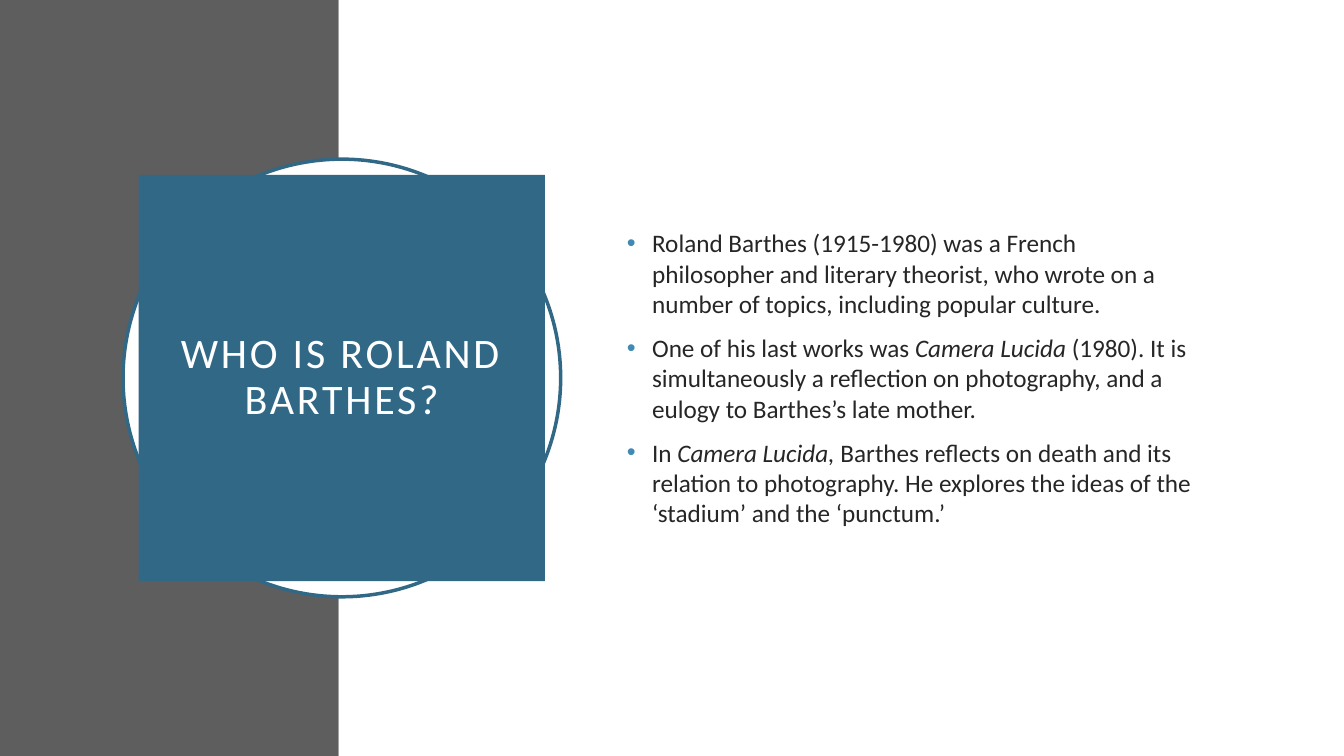
from lxml.etree import SubElement
from pptx import Presentation
from pptx.dml.color import RGBColor
from pptx.enum.shapes import MSO_SHAPE
from pptx.enum.text import MSO_ANCHOR, PP_ALIGN
from pptx.oxml.ns import qn
from pptx.util import Pt

TITLE = "WHO IS ROLAND BARTHES?"
# Each bullet is a list of (text, italic) runs.
BULLETS = [
    [("Roland Barthes (1915-1980) was a French philosopher and literary theorist, "
      "who wrote on a number of topics, including popular culture.", False)],
    [("One of his last works was ", False), ("Camera Lucida ", True),
     ("(1980). It is simultaneously a reflection on photography, "
      "and a eulogy to Barthes’s late mother.", False)],
    [("In ", False), ("Camera Lucida, ", True),
     ("Barthes reflects on death and its relation to photography. "
      "He explores the ideas of the ‘stadium’ and the ‘punctum.’", False)],
]
COLORS = {"gray": "5E5E5E", "white": "FFFFFF", "blue": "316886",
          "dot": "418AB3", "ink": "262626"}
FONT = "Calibri"
WIDTH, HEIGHT = 960, 540
BAND = 242
MID_X, MID_Y = 244.2, 270
RING, SQUARE = 312.6, 290.2
BODY = (440.7, 110.3, 419, 319)


def color(name):
    return RGBColor.from_string(COLORS[name])


def add_block(kind, box, fill, line=None):
    shape = slide.shapes.add_shape(kind, *map(Pt, box))
    shape.shadow.inherit = False
    shape.fill.solid()
    shape.fill.fore_color.rgb = color(fill)
    if line:
        shape.line.color.rgb = color(line)
        shape.line.width = Pt(2.5)
    else:
        shape.line.fill.background()
    return shape


def centered(size):
    return MID_X - size / 2, MID_Y - size / 2, size, size


def add_bullet(para, indent=18):
    props = para._p.get_or_add_pPr()
    props.set("marL", str(Pt(indent)))
    props.set("indent", str(Pt(-indent)))
    tint = SubElement(props, qn("a:buClr"))
    SubElement(tint, qn("a:srgbClr")).set("val", COLORS["dot"])
    SubElement(props, qn("a:buFont")).set("typeface", "Arial")
    SubElement(props, qn("a:buChar")).set("char", "•")


def write(shape, paras, size, ink, align=PP_ALIGN.LEFT, inset=None,
          leading=None, before=None, track=None, bullet=False):
    frame = shape.text_frame
    frame.word_wrap = True
    frame.vertical_anchor = MSO_ANCHOR.MIDDLE
    if inset is not None:
        frame.margin_left = frame.margin_right = Pt(inset)
        frame.margin_top = frame.margin_bottom = Pt(inset)
    for i, runs in enumerate(paras):
        para = frame.add_paragraph() if i else frame.paragraphs[0]
        para.alignment = align
        if leading:
            para.line_spacing = leading
        if before:
            para.space_before = Pt(before)
        if bullet:
            add_bullet(para)
        for text, italic in runs:
            run = para.add_run()
            run.text = text
            font = run.font
            font.name, font.size, font.italic = FONT, Pt(size), italic
            font.color.rgb = color(ink)
            if track:
                run._r.get_or_add_rPr().set("spc", str(track * 100))


deck = Presentation()
deck.slide_width, deck.slide_height = Pt(WIDTH), Pt(HEIGHT)
slide = deck.slides.add_slide(deck.slide_layouts[6])

add_block(MSO_SHAPE.RECTANGLE, (0, 0, BAND, HEIGHT), "gray")
add_block(MSO_SHAPE.RECTANGLE, (BAND, 0, WIDTH - BAND, HEIGHT), "white")
add_block(MSO_SHAPE.OVAL, centered(RING), "white", line="blue")
title = add_block(MSO_SHAPE.RECTANGLE, centered(SQUARE), "blue")
write(title, [[(TITLE, False)]], 30, "white", align=PP_ALIGN.CENTER,
      inset=14.4, leading=0.9, track=2)
body = slide.shapes.add_textbox(*map(Pt, BODY))
write(body, BULLETS, 18, "ink", before=10, bullet=True)

deck.save("out.pptx")
